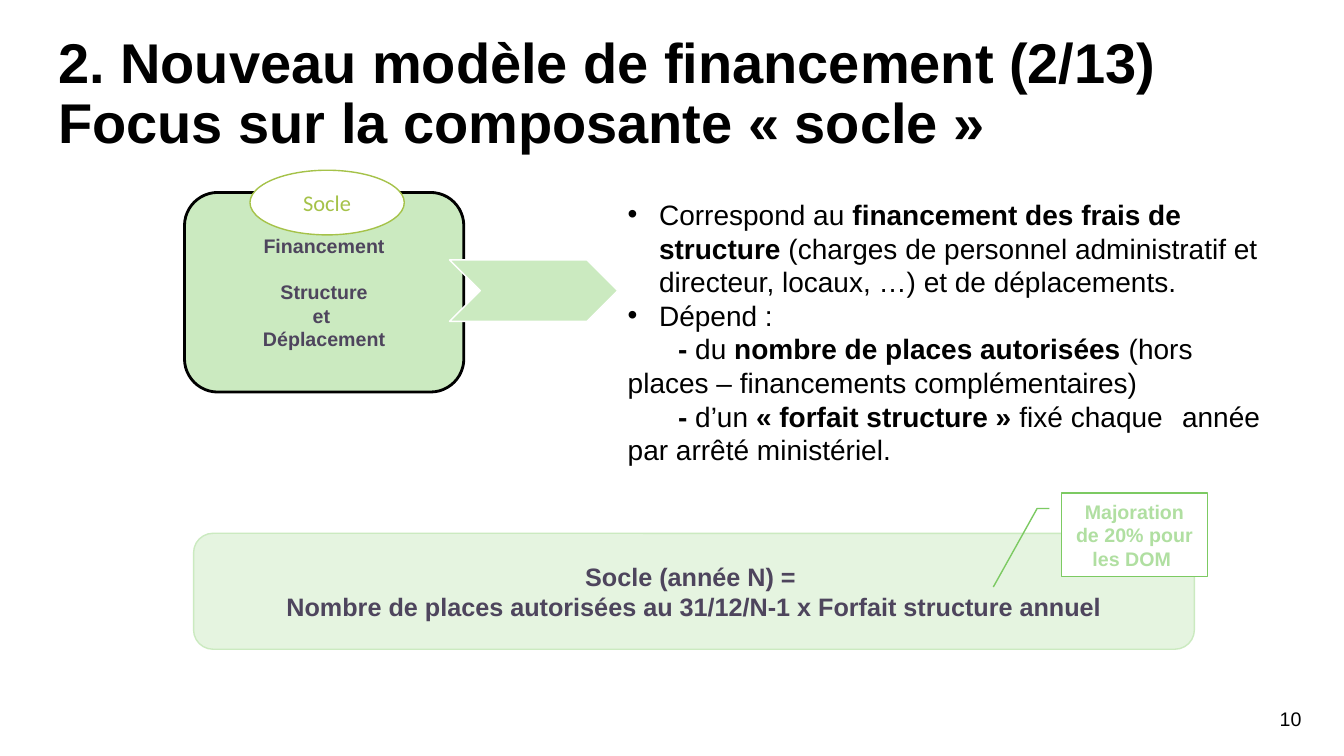
from lxml.etree import SubElement
from pptx import Presentation
from pptx.dml.color import RGBColor
from pptx.enum.shapes import MSO_SHAPE as Shape
from pptx.enum.text import MSO_ANCHOR as Anchor, MSO_AUTO_SIZE as AutoSize, PP_ALIGN as Align
from pptx.oxml.ns import qn
from pptx.util import Cm, Pt

COLOURS = {
    "black": "000000",
    "white": "FFFFFF",
    "plum": "4E455D",
    "olive": "A5C249",
    "leaf": "7CCA62",
    "soft": "B0DFA1",
    "light": "CBEAC0",
    "pale": "E5F4E0",
}


def colour(name):
    return RGBColor.from_string(COLOURS[name])


class SlideBuilder:
    font = "Arial"

    def __init__(self, slide):
        self.slide = slide

    def style(self, paragraph, size, ink, bold, font, align):
        paragraph.alignment = align
        for run in paragraph.runs:
            run.font.name = font or self.font
            run.font.size = Pt(size)
            run.font.color.rgb = colour(ink)
            run.font.bold = bold

    def text(self, box, content, size, bold=False, align=Align.LEFT):
        """Plain text box; a vertical tab in content breaks the line."""
        frame = self.slide.shapes.add_textbox(*map(Cm, box)).text_frame
        frame.word_wrap = True
        frame.text = content
        self.style(frame.paragraphs[0], size, "black", bold, None, align)
        return frame

    def shape(self, kind, box, fill, line, width=1, content="", size=14,
              ink="plum", bold=True, font=None):
        """Filled shape with centred text, one paragraph per line."""
        shape = self.slide.shapes.add_shape(kind, *map(Cm, box))
        shape.shadow.inherit = False
        shape.fill.solid()
        shape.fill.fore_color.rgb = colour(fill)
        shape.line.color.rgb = colour(line)
        shape.line.width = Pt(width)
        frame = shape.text_frame
        frame.word_wrap = True
        frame.vertical_anchor = Anchor.MIDDLE
        frame.text = content
        for paragraph in frame.paragraphs:
            self.style(paragraph, size, ink, bold, font, Align.CENTER)
        return frame

    def details(self, box, items, size):
        """Items are (bulleted, text) pairs; ** switches bold on and off."""
        frame = self.slide.shapes.add_textbox(*map(Cm, box)).text_frame
        frame.word_wrap = True
        frame.auto_size = AutoSize.SHAPE_TO_FIT_TEXT
        for index, (bulleted, content) in enumerate(items):
            paragraph = frame.add_paragraph() if index else frame.paragraphs[0]
            if bulleted:
                self.bullet(paragraph)
            for part, words in enumerate(content.split("**")):
                if words:
                    run = paragraph.add_run()
                    run.text = words
                    run.font.name = self.font
                    run.font.size = Pt(size)
                    run.font.color.rgb = colour("black")
                    run.font.bold = part % 2 == 1

    def bullet(self, paragraph, indent=0.79):
        properties = paragraph._p.get_or_add_pPr()
        properties.set("marL", str(Cm(indent)))
        properties.set("indent", str(-Cm(indent)))
        SubElement(properties, qn("a:buFont")).set("typeface", self.font)
        SubElement(properties, qn("a:buChar")).set("char", "•")


def main():
    deck = Presentation()
    deck.slide_width, deck.slide_height = Cm(33.87), Cm(19.05)
    page = SlideBuilder(deck.slides.add_slide(deck.slide_layouts[6]))

    # Page number and title
    page.text((25.43, 17.7, 7.62, 1.02), "10", 14, align=Align.RIGHT)
    title = page.text(
        (1.22, 0.76, 30.91, 3.68),
        "2. Nouveau modèle de financement (2/13) \vFocus sur la composante « socle »",
        40, bold=True)
    title.paragraphs[0].line_spacing = 0.9

    # Funding component and its label
    component = page.shape(
        Shape.ROUNDED_RECTANGLE, (4.65, 4.85, 7.04, 5.03), "light", "black", 2,
        "Financement\nStructure\vet \nDéplacement")
    component.paragraphs[1].space_before = Pt(16.5)
    page.shape(Shape.OVAL, (6.3, 4.29, 3.89, 1.63), "white", "olive",
               content="Socle", size=16, ink="olive", bold=False, font="Calibri")

    # Formula
    page.shape(
        Shape.ROUNDED_RECTANGLE, (4.88, 13.44, 25.22, 2.92), "pale", "light",
        content="Socle (année N) = \vNombre de places autorisées au 31/12/N-1"
                " x Forfait structure annuel",
        size=18)

    # Arrow to the explanation
    page.shape(Shape.CHEVRON, (11.33, 6.55, 4.24, 1.55), "light", "white")
    page.details((15.57, 4.85, 16.84, 7.87), [
        (True, "Correspond au **financement des frais de structure **(charges de "
               "personnel administratif et directeur, locaux, …) et de déplacements."),
        (True, "Dépend :"),
        (False, "\t**-** du **nombre de places autorisées **(hors \tplaces – "
                "financements complémentaires)"),
        (False, "\t**-** d’un **« forfait structure » **fixé chaque \tannée "
                "\tpar arrêté ministériel."),
    ], 20)

    # Overseas surcharge
    page.shape(Shape.LINE_CALLOUT_2, (26.75, 12.42, 3.68, 2.11), "white", "leaf",
               content="Majoration de 20% pour les DOM ", ink="soft")

    deck.save("out.pptx")


if __name__ == "__main__":
    main()
